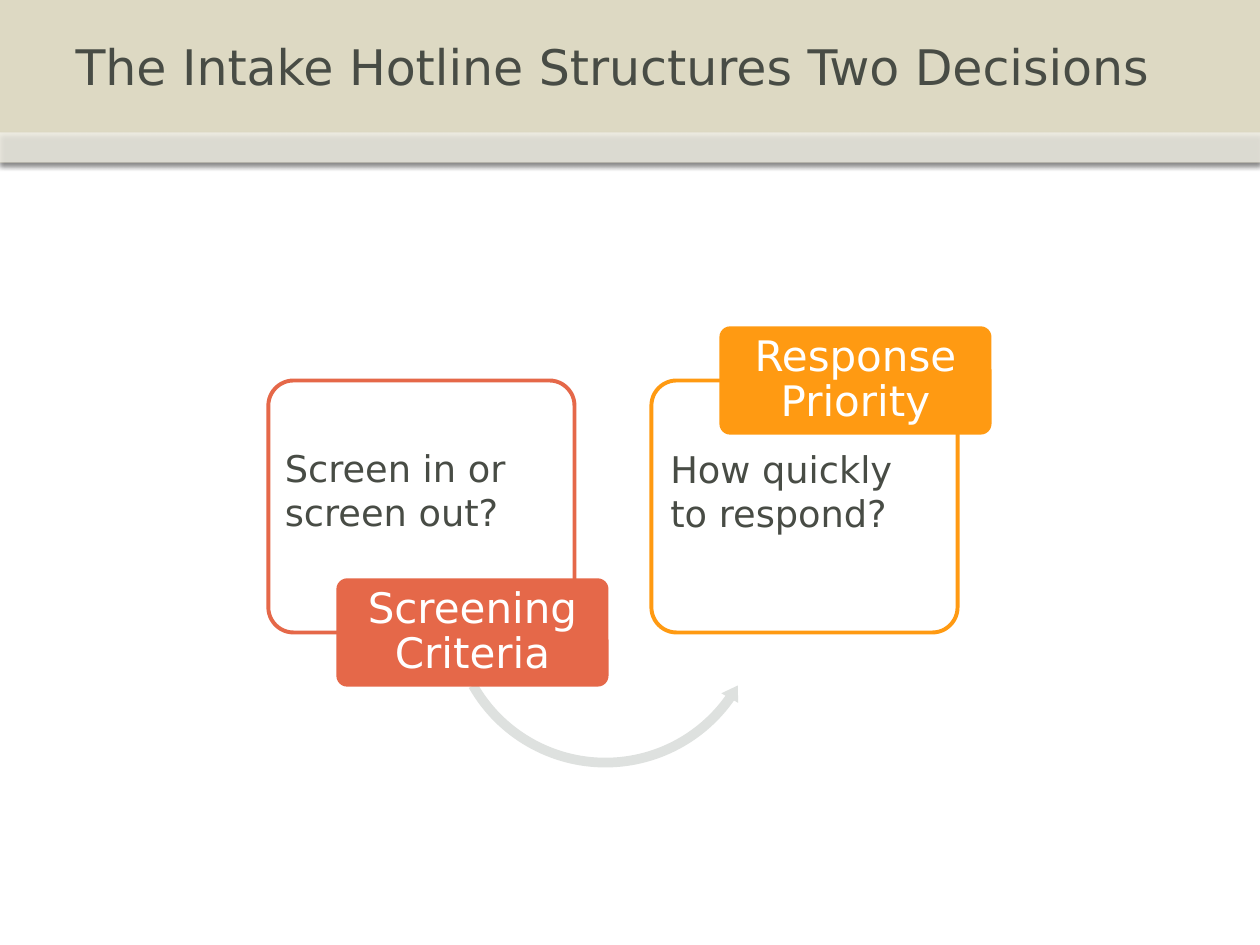
from dataclasses import dataclass

from lxml.etree import SubElement
from pptx import Presentation
from pptx.dml.color import RGBColor
from pptx.enum.shapes import MSO_SHAPE
from pptx.enum.text import MSO_ANCHOR, MSO_AUTO_SIZE, PP_ALIGN
from pptx.oxml.ns import qn
from pptx.util import Inches, Pt

FONT = "DejaVu Sans"
INK = "484C45"
CARD_W, CARD_H, CARD_Y = 2.43, 2, 3.02
LABEL_W, LABEL_H = 2.16, 0.86
LABEL_SHIFT = 0.54


@dataclass
class Decision:
    x: float
    color: str
    label: str
    label_y: float
    question: str
    question_box: tuple


DECISIONS = [
    Decision(2.13, "E56849", "Screening Criteria", 4.59,
             "Screen in or screen out?", (2.19, 3.31, 2.31, 1.5)),
    Decision(5.17, "FF9A12", "Response Priority", 2.59,
             "How quickly to respond?", (5.25, 3.19, 2.25, 1.75)),
]


def rgb(color: str) -> RGBColor:
    return RGBColor.from_string(color)


def add_box(s, kind, box: tuple, fill: str, line: str = None, adj: tuple = ()):
    sp = s.shapes.add_shape(kind, *map(Inches, box))
    sp.shadow.inherit = False
    sp.fill.solid()
    sp.fill.fore_color.rgb = rgb(fill)
    if line:
        sp.line.color.rgb = rgb(line)
        sp.line.width = Pt(2.25)
    else:
        sp.line.fill.background()
    for i, value in enumerate(adj):
        sp.adjustments[i] = value
    return sp


def write(sp, text: str, size: float, color: str = INK, align=PP_ALIGN.LEFT,
          insets: tuple = (0.1, 0.05, 0.1, 0.05), spacing: float = 1) -> None:
    tf = sp.text_frame
    tf.word_wrap = True
    tf.auto_size = MSO_AUTO_SIZE.NONE
    tf.vertical_anchor = MSO_ANCHOR.MIDDLE
    tf.margin_left, tf.margin_top, tf.margin_right, tf.margin_bottom = map(Inches, insets)
    p = tf.paragraphs[0]
    p.alignment = align
    p.line_spacing = spacing
    r = p.add_run()
    r.text = text
    r.font.name = FONT
    r.font.size = Pt(size)
    r.font.color.rgb = rgb(color)


def add_band(s, y: float, h: float, fill: str, opacity: int = 100) -> None:
    sp = add_box(s, MSO_SHAPE.RECTANGLE, (0, y, 10, h), fill)
    pr = sp.element.spPr
    fill_color = pr.find(qn("a:solidFill")).find(qn("a:srgbClr"))
    SubElement(fill_color, qn("a:alpha"), val=str(opacity * 1000))
    shadow = SubElement(pr.find(qn("a:effectLst")), qn("a:outerShdw"),
                        blurRad=str(Pt(3.1)), dist=str(Pt(1.8)),
                        dir="5400000", rotWithShape="0")
    shadow_color = SubElement(shadow, qn("a:srgbClr"), val="000000")
    SubElement(shadow_color, qn("a:alpha"), val="35000")


def add_title(s) -> None:
    title = s.shapes.title
    title.left, title.top, title.width, title.height = map(Inches, (0.5, 0, 9, 1.05))
    write(title, "The Intake Hotline Structures Two Decisions", size=28)
    title.element.getparent().append(title.element)


def add_card(s, d: Decision) -> None:
    add_box(s, MSO_SHAPE.ROUNDED_RECTANGLE, (d.x, CARD_Y, CARD_W, CARD_H),
            "FFFFFF", line=d.color, adj=(0.1,))


def add_label(s, d: Decision) -> None:
    sp = add_box(s, MSO_SHAPE.ROUNDED_RECTANGLE,
                 (d.x + LABEL_SHIFT, d.label_y, LABEL_W, LABEL_H), d.color, adj=(0.1,))
    write(sp, d.label, size=24, color="FFFFFF", align=PP_ALIGN.CENTER,
          insets=(0.08, 0.05, 0.08, 0.05), spacing=0.9)


def add_question(s, d: Decision) -> None:
    sp = s.shapes.add_textbox(*map(Inches, d.question_box))
    write(sp, d.question, size=21, insets=(0.07, 0.04, 0.25, 0.38))


def main() -> None:
    prs = Presentation()
    prs.slide_width, prs.slide_height = Inches(10), Inches(7.5)
    s = prs.slides.add_slide(prs.slide_layouts[5])
    add_band(s, 0, 1.29, "DDD9C3")
    add_band(s, 1.05, 0.24, "FFFFFF", opacity=53)
    add_title(s)
    for d in DECISIONS:
        add_card(s, d)
    add_box(s, MSO_SHAPE.LEFT_CIRCULAR_ARROW, (3.52, 3.56, 2.57, 2.57), "DEE1DF",
            adj=(0.03, 3.36, 21.11, 90.25, 0.03))
    for d in DECISIONS:
        add_label(s, d)
        add_question(s, d)
    prs.save("out.pptx")


if __name__ == "__main__":
    main()
